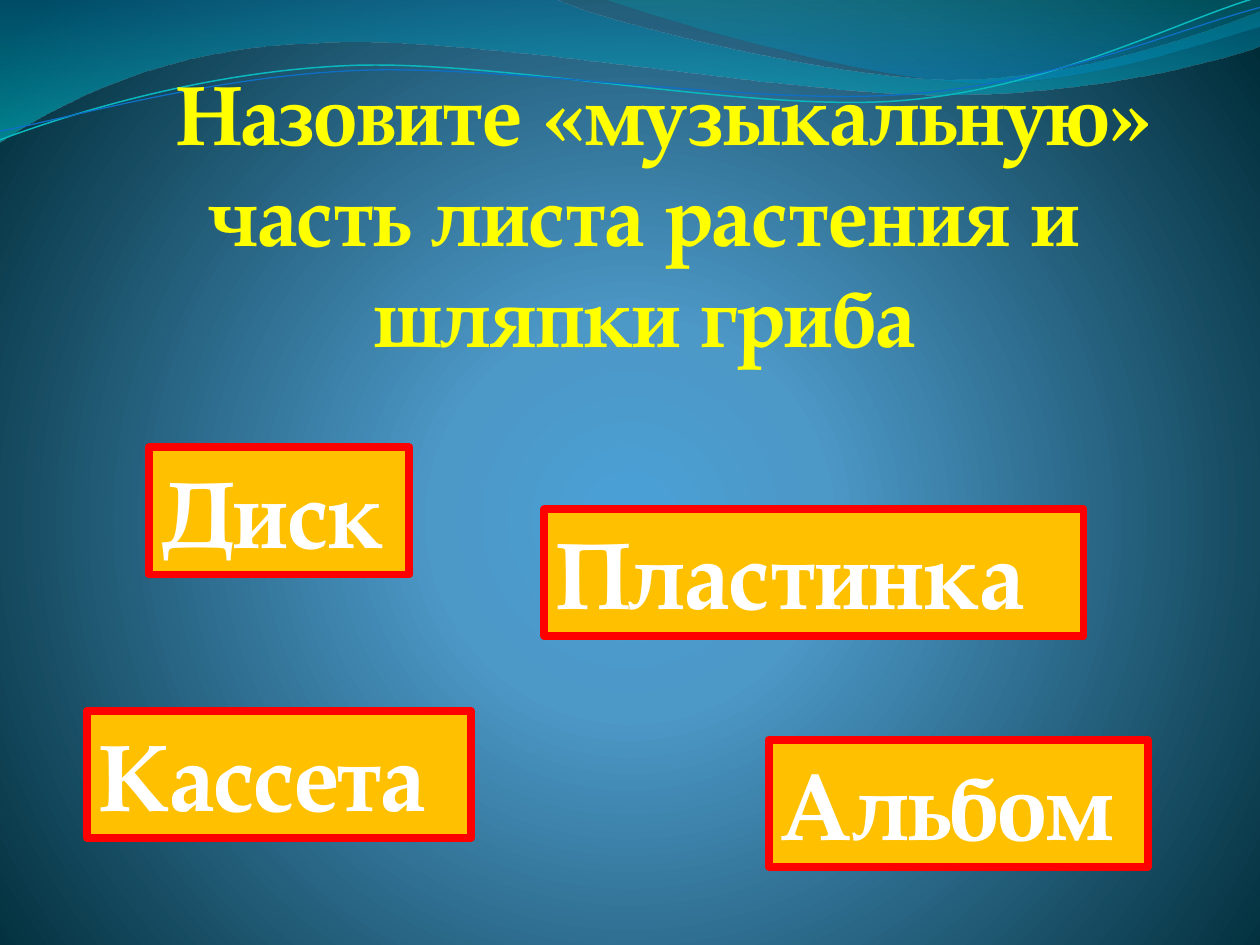
from dataclasses import dataclass
from math import cos, radians, sin

from lxml import etree
from pptx import Presentation
from pptx.dml.color import RGBColor
from pptx.enum.shapes import MSO_SHAPE
from pptx.enum.text import MSO_ANCHOR, MSO_AUTO_SIZE, PP_ALIGN
from pptx.oxml.ns import qn
from pptx.util import Inches, Pt

RECT = MSO_SHAPE.RECTANGLE
TOP, NO_FIT = MSO_ANCHOR.TOP, MSO_AUTO_SIZE.NONE
LEFT, CENTER = PP_ALIGN.LEFT, PP_ALIGN.CENTER


@dataclass(frozen=True)
class Theme:
    font: str = "TeX Gyre Pagella"
    question: str = "FFFF00"
    answer: str = "FFFFFF"
    box: str = "FFC000"
    frame: str = "FF0000"
    frame_width: float = 4.5
    question_size: int = 48
    answer_size: int = 54


THEME = Theme()

# Content: question and answers with left, top, width in inches
QUESTION = "Назовите «музыкальную» часть листа растения и шляпки гриба"
QUESTION_AREA = (0.51, 0.44, 9.21, 3.8)
FIRST_LINE_INDENT = 0.31
BOX_HEIGHT = 1.01
ANSWERS = [
    ("Диск", 1.18, 3.55, 2.07),
    ("Кассета", 0.69, 5.64, 3.05),
    ("Пластинка", 4.32, 4.04, 4.28),
    ("Альбом", 6.1, 5.87, 3.01),
]

# Gradient stops: position %, colour, opacity %
BACKDROP = [(0, "4AA0D6", 100), (25, "4C98C7", 100), (100, "002C38", 100)]
GLOW = {"l": 10, "t": 110, "r": 10, "b": 100}

# Outlines: a start point, then one point per line or three per Bezier curve
WAVES = [
    ([(0, "0074A1", 45), (100, "00C6CF", 55)], (0, 0), [
        [(4.4, -0.01)],
        [(4.76, 0.17), (6.64, 0.63), (7.58, 0.63)],
        [(8.53, 0.63), (9.58, 0.26), (10, 0.09)],
        [(10.01, 0.36)],
        [(9.83, 0.44), (8.7, 0.76), (7.46, 0.75)],
        [(6.22, 0.75), (3.82, 0.28), (2.57, 0.34)],
        [(1.29, 0.36), (0.46, 0.83), (-0.01, 1.13)],
        [(0, 0)]]),
    ([(0, "00A1A9", 30), (80, "008BBF", 45)], (4.79, -0.01), [
        [(5.09, 0.11), (6.82, 0.62), (7.69, 0.65)],
        [(8.56, 0.69), (9.61, 0.32), (10, 0.21)],
        [(10, 0)],
        [(4.79, -0.01)]]),
]
# Strands: colour, width, centre of the tilt, outline
TILT = -2.7
STRANDS = [
    ("0AB8BF", 0.85, (4.99, 0.575), (0, 1.11), [
        [(0.48, 0.93), (1.58, 0.57), (2.77, 0.52)],
        [(3.95, 0.47), (5.93, 0.89), (7.13, 0.8)],
        [(8.33, 0.71), (9.38, 0.15), (9.98, -0.02)]]),
    ("0F6FC6", 0.75, (5, 0.59), (0, 1.04), [
        [(0.47, 0.96), (1.64, 0.61), (2.83, 0.56)],
        [(4.03, 0.51), (5.97, 0.84), (7.17, 0.75)],
        [(8.36, 0.67), (9.41, 0.21), (10, 0.06)]]),
]


def rgb(colour):
    return RGBColor.from_string(colour)


def set_gradient(fill, holder, stops, glow=None):
    """Swap the solid fill of holder for a vertical or a circular gradient."""
    fill.solid()
    gradient = etree.Element(qn("a:gradFill"), rotWithShape="1")
    stop_list = etree.SubElement(gradient, qn("a:gsLst"))
    for position, colour, opacity in stops:
        stop = etree.SubElement(stop_list, qn("a:gs"), pos=str(position * 1000))
        tint = etree.SubElement(stop, qn("a:srgbClr"), val=colour)
        if opacity < 100:
            etree.SubElement(tint, qn("a:alpha"), val=str(opacity * 1000))
    if glow:
        shade = etree.SubElement(gradient, qn("a:path"))
        shade.set("path", "circle")
        focus = etree.SubElement(shade, qn("a:fillToRect"))
        for side, share in glow.items():
            focus.set(side, str(share * 1000))
    else:
        etree.SubElement(gradient, qn("a:lin"), ang="5400000", scaled="1")
    holder.replace(holder.find(qn("a:solidFill")), gradient)


def turn(point, centre, degrees):
    dx, dy = point[0] - centre[0], point[1] - centre[1]
    c, s = cos(radians(degrees)), sin(radians(degrees))
    return centre[0] + dx * c - dy * s, centre[1] + dx * s + dy * c


def draw_outline(shapes, start, segments, close):
    """Draw through all points, then join each triple into a Bezier curve."""
    first, *rest = [(Inches(x), Inches(y)) for x, y in [start, *sum(segments, [])]]
    builder = shapes.build_freeform(*first)
    builder.add_line_segments(rest, close=close)
    outline = builder.convert_to_shape()
    outline.shadow.inherit = False
    lines = iter(outline.element.findall(".//" + qn("a:lnTo")))
    for segment in segments:
        steps = [next(lines) for _ in segment]
        if len(steps) == 3:
            curve = etree.Element(qn("a:cubicBezTo"))
            steps[0].addprevious(curve)
            for step in steps:
                curve.append(step[0])
                step.getparent().remove(step)
    return outline


def write(shape, text, size, colour, alignment):
    frame = shape.text_frame
    frame.text = text
    layout = {"word_wrap": True, "auto_size": NO_FIT, "vertical_anchor": TOP,
              "margin_left": Inches(0.1), "margin_right": Inches(0.1),
              "margin_top": Inches(0.05), "margin_bottom": Inches(0.05)}
    for name, value in layout.items():
        setattr(frame, name, value)
    paragraph = frame.paragraphs[0]
    paragraph.alignment = alignment
    font = paragraph.runs[0].font
    for name, value in {"name": THEME.font, "size": Pt(size), "bold": True}.items():
        setattr(font, name, value)
    font.color.rgb = rgb(colour)
    return paragraph


def main():
    deck = Presentation()
    deck.slide_width, deck.slide_height = Inches(10), Inches(7.5)
    slide = deck.slides.add_slide(deck.slide_layouts[5])

    # Backdrop with waves and thin strands
    backdrop = slide.background.fill
    backdrop.solid()
    set_gradient(backdrop, slide.element.find(".//" + qn("p:bgPr")), BACKDROP, GLOW)
    for stops, start, segments in WAVES:
        wave = draw_outline(slide.shapes, start, segments, close=True)
        set_gradient(wave.fill, wave.element.spPr, stops)
        wave.line.fill.background()
    strands = slide.shapes.add_group_shape()
    for colour, width, centre, start, segments in STRANDS:
        level = [[turn(point, centre, -TILT) for point in segment] for segment in segments]
        strand = draw_outline(strands.shapes, turn(start, centre, -TILT), level, close=False)
        strand.rotation = TILT
        strand.fill.background()
        strand.line.color.rgb = rgb(colour)
        strand.line.width = Pt(width)

    # Question, in front of the waves
    question = slide.shapes.title
    slide.shapes.element.append(question.element)
    for name, value in zip(("left", "top", "width", "height"), QUESTION_AREA):
        setattr(question, name, Inches(value))
    paragraph = write(question, QUESTION, THEME.question_size, THEME.question, CENTER)
    properties = paragraph._p.get_or_add_pPr()
    properties.set("marL", "0")
    properties.set("indent", str(Inches(FIRST_LINE_INDENT)))

    # Answer boxes
    for answer, left, top, width in ANSWERS:
        box = slide.shapes.add_shape(
            RECT, *map(Inches, (left, top, width, BOX_HEIGHT)))
        box.shadow.inherit = False
        box.fill.solid()
        box.fill.fore_color.rgb = rgb(THEME.box)
        box.line.color.rgb = rgb(THEME.frame)
        box.line.width = Pt(THEME.frame_width)
        write(box, answer, THEME.answer_size, THEME.answer, LEFT)

    deck.save("out.pptx")


if __name__ == "__main__":
    main()
